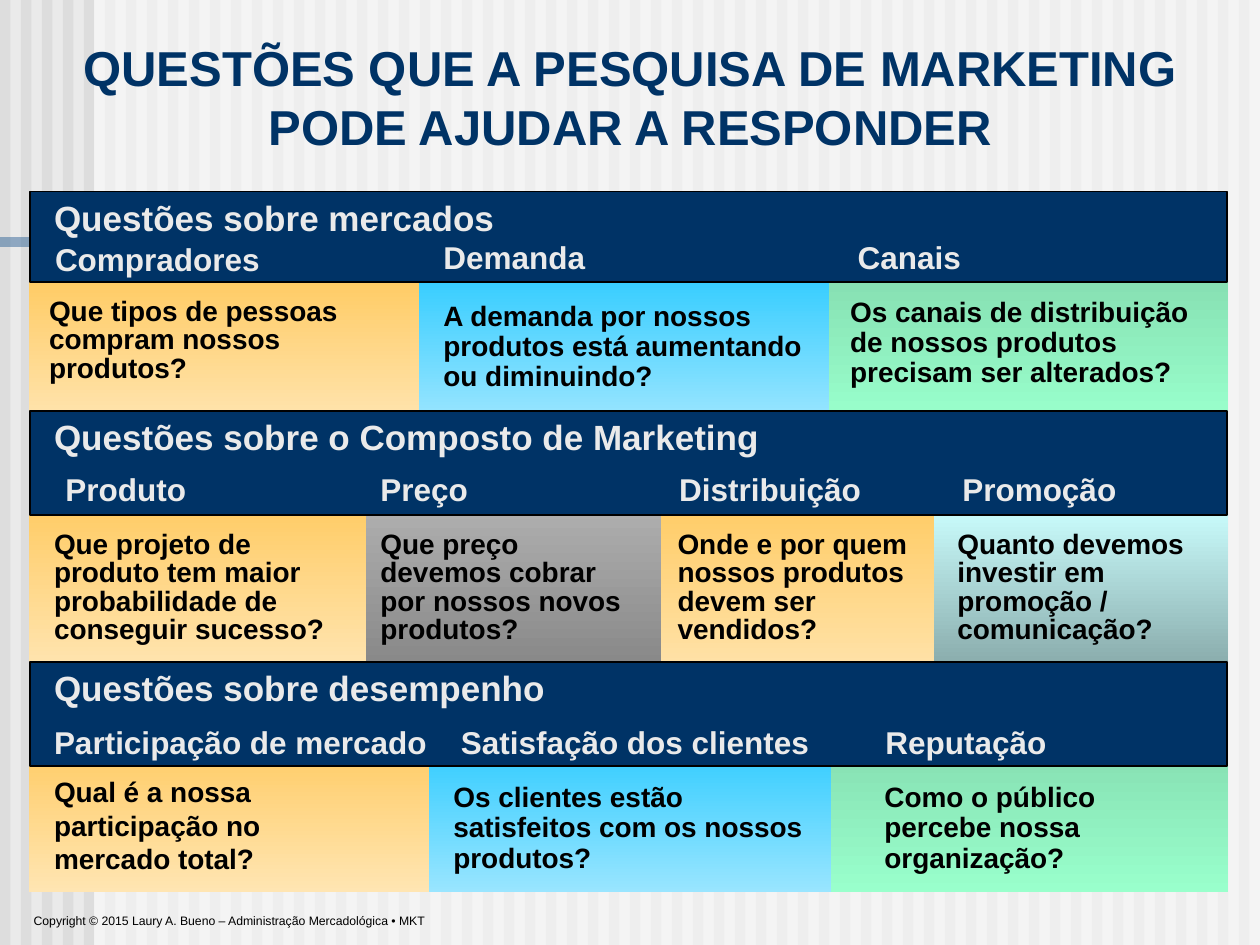
from collections import namedtuple

from lxml import etree
from pptx import Presentation
from pptx.dml.color import RGBColor
from pptx.enum.shapes import MSO_SHAPE
from pptx.enum.text import MSO_ANCHOR, MSO_AUTO_SIZE, PP_ALIGN
from pptx.oxml.ns import qn
from pptx.util import Cm, Pt

RECT = MSO_SHAPE.RECTANGLE
BOTTOM = MSO_ANCHOR.BOTTOM
TOP = MSO_ANCHOR.TOP
LEFT, CENTER = PP_ALIGN.LEFT, PP_ALIGN.CENTER
NO_FIT = MSO_AUTO_SIZE.NONE

BLACK = RGBColor(0x00, 0x00, 0x00)
WHITE = RGBColor(0xFF, 0xFF, 0xFF)
NAVY = RGBColor(0x00, 0x33, 0x66)
STEEL = RGBColor(0x33, 0x66, 0x99)
PALE = RGBColor(0xEA, 0xEA, 0xEA)
STRIPE = RGBColor(0xDD, 0xDD, 0xDD)
ORANGE = RGBColor(0xFF, 0xCC, 0x66), RGBColor(0xFF, 0xE5, 0xB2)
BLUE = RGBColor(0x33, 0xCC, 0xFF), RGBColor(0x99, 0xE5, 0xFF)
GREEN = RGBColor(0x86, 0xDF, 0xB2), RGBColor(0x99, 0xFF, 0xCC)
GRAY = RGBColor(0xB2, 0xB2, 0xB2), RGBColor(0x87, 0x87, 0x87)
TEAL = RGBColor(0xCC, 0xFF, 0xFF), RGBColor(0x87, 0xA9, 0xA9)

# Boxes are (left, top, width, height) in centimetres.
Band = namedtuple("Band", "title top height width cells")
Cell = namedtuple("Cell", "box fill head head_at text text_at gap")

BANDS = [
    Band("Questões sobre mercados", 3.86, 1.83, 11.02, [
        Cell((0.58, 5.68, 7.87, 2.95), ORANGE,
             "Compradores", (0.86, 4.72, 7.29, 1.02),
             "Que tipos de pessoas compram nossos produtos?",
             (0.74, 5.89, 7.54, 1.98), 0.85),
        Cell((8.2, 5.51, 8.51, 2.95), BLUE,
             "Demanda", (8.69, 4.67, 4.55, 1.02),
             "A demanda por nossos produtos está aumentando ou diminuindo?",
             (8.69, 5.97, 8.05, 2.08), 0.9),
        Cell((16.71, 5.51, 8.05, 2.95), GREEN,
             "Canais", (17.04, 4.67, 4.55, 1.02),
             "Os canais de distribuição de nossos produtos precisam ser alterados?",
             (16.89, 5.89, 7.87, 2.08), 0.9),
    ]),
    Band("Questões sobre o Composto de Marketing", 8.28, 2.11, 18.01, [
        Cell((0.58, 10.19, 6.81, 3.38), ORANGE,
             "Produto", (1.07, 9.35, 7.29, 1.02),
             "Que projeto de produto tem maior probabilidade de conseguir sucesso?",
             (0.84, 10.59, 6.07, 2.57), 0.85),
        Cell((6.98, 9.96, 6.35, 3.58), GRAY,
             "Preço", (7.42, 9.35, 4.55, 1.02),
             "Que preço devemos cobrar por nossos novos produtos?",
             (7.42, 10.59, 5.84, 2.57), 0.85),
        Cell((13.33, 10.16, 5.51, 3.81), ORANGE,
             "Distribuição", (13.44, 9.35, 4.55, 1.02),
             "Onde e por quem nossos produtos devem ser vendidos?",
             (13.41, 10.59, 6.07, 2.57), 0.85),
        Cell((17.96, 10.16, 6.8, 3.38), TEAL,
             "Promoção", (19.15, 9.35, 4.55, 1.02),
             "Quanto devemos investir em promoção / comunicação?",
             (19.05, 10.59, 6.15, 2.57), 0.85),
    ]),
    Band("Questões sobre desempenho", 13.34, 2.11, 11.02, [
        Cell((0.58, 15.04, 8.08, 2.95), ORANGE,
             "Participação de mercado", (0.84, 14.45, 9.09, 1.02),
             "Qual é a nossa participação no mercado total?",
             (0.84, 15.49, 5.72, 2.29), 1.0),
        Cell((8.25, 15.04, 8.51, 2.95), BLUE,
             "Satisfação dos clientes", (9.04, 14.45, 8.5, 1.02),
             "Os clientes estão satisfeitos com os nossos produtos?",
             (8.89, 15.67, 8.05, 2.08), 0.9),
        Cell((16.71, 15.04, 8.05, 2.95), GREEN,
             "Reputação", (17.6, 14.45, 4.8, 1.02),
             "Como o público percebe nossa organização?",
             (17.58, 15.67, 6.98, 2.08), 0.9),
    ]),
]


def write(frame, text, size=16, color=BLACK, bold=True, align=LEFT,
          gap=1.0, wrap=True, anchor=TOP, font="Arial"):
    frame.auto_size = NO_FIT
    frame.word_wrap = wrap
    frame.vertical_anchor = anchor
    para = frame.paragraphs[0]
    para.alignment = align
    para.line_spacing = gap
    run = para.add_run()
    run.text = text
    run.font.name = font
    run.font.size = Pt(size)
    run.font.bold = bold
    run.font.color.rgb = color


class Page:
    """Holds the slide and its look."""

    def __init__(self, deck):
        self.slide = deck.slides.add_slide(deck.slide_layouts[5])
        self.shapes = self.slide.shapes
        back = self.slide.background.fill
        back.solid()
        back.fore_color.rgb = PALE

    def rect(self, box, fill, line=None, alpha=None):
        """Draw a box; a pair of colours gives a top-down gradient."""
        shape = self.shapes.add_shape(RECT, *map(Cm, box))
        shape.shadow.inherit = False
        if isinstance(fill, RGBColor):
            shape.fill.solid()
            shape.fill.fore_color.rgb = fill
        else:
            shape.fill.gradient()
            shape.fill.gradient_angle = 270
            for stop, color in zip(shape.fill.gradient_stops, fill):
                stop.color.rgb = color
        if alpha:
            tint = shape.fill._xPr.find(".//" + qn("a:srgbClr"))
            etree.SubElement(tint, qn("a:alpha"), val=str(alpha * 1000))
        if line is None:
            shape.line.fill.background()
        else:
            shape.line.color.rgb = line
            shape.line.width = Pt(1)

    def label(self, box, text, **style):
        frame = self.shapes.add_textbox(*map(Cm, box)).text_frame
        write(frame, text, **style)

    def title(self, box, text, **style):
        """Fill the title and bring it in front of what is drawn so far."""
        holder = self.shapes.title
        holder.left, holder.top, holder.width, holder.height = map(Cm, box)
        write(holder.text_frame, text, **style)
        self.shapes._spTree.append(holder._element)


def main():
    deck = Presentation()
    deck.slide_width, deck.slide_height = Cm(25.4), Cm(19.05)
    page = Page(deck)

    pitch = 25.4 / 60
    for i in range(60):
        page.rect((i * pitch, 0, pitch / 2, 19.05), STRIPE)
    page.rect((1.9, 0, 23.5, 19.05), WHITE, alpha=50)
    page.rect((0, 4.78, 19.3, 0.2), STEEL, alpha=50)

    page.title((1.27, 0.64, 22.86, 2.62),
               "QUESTÕES QUE A PESQUISA DE MARKETING PODE AJUDAR A RESPONDER",
               size=28, color=NAVY, align=CENTER, anchor=BOTTOM)

    # Left cells overlap right ones, and bands overlap all cells.
    for band in BANDS:
        for cell in reversed(band.cells):
            page.rect(cell.box, cell.fill)
    for band in BANDS:
        page.rect((0.61, band.top, 24.13, band.height), NAVY, line=BLACK)
        page.label((0.84, band.top - 0.03, band.width, 1.09), band.title,
                   size=20, color=PALE)
        for cell in band.cells:
            page.label(cell.head_at, cell.head, size=18, color=PALE)
            page.label(cell.text_at, cell.text, gap=cell.gap)

    page.label((0.43, 18.29, 8.53, 0.56),
               "Copyright © 2015 Laury A. Bueno – Administração Mercadológica • MKT",
               size=7, bold=False, wrap=False)
    deck.save("out.pptx")


if __name__ == "__main__":
    main()
